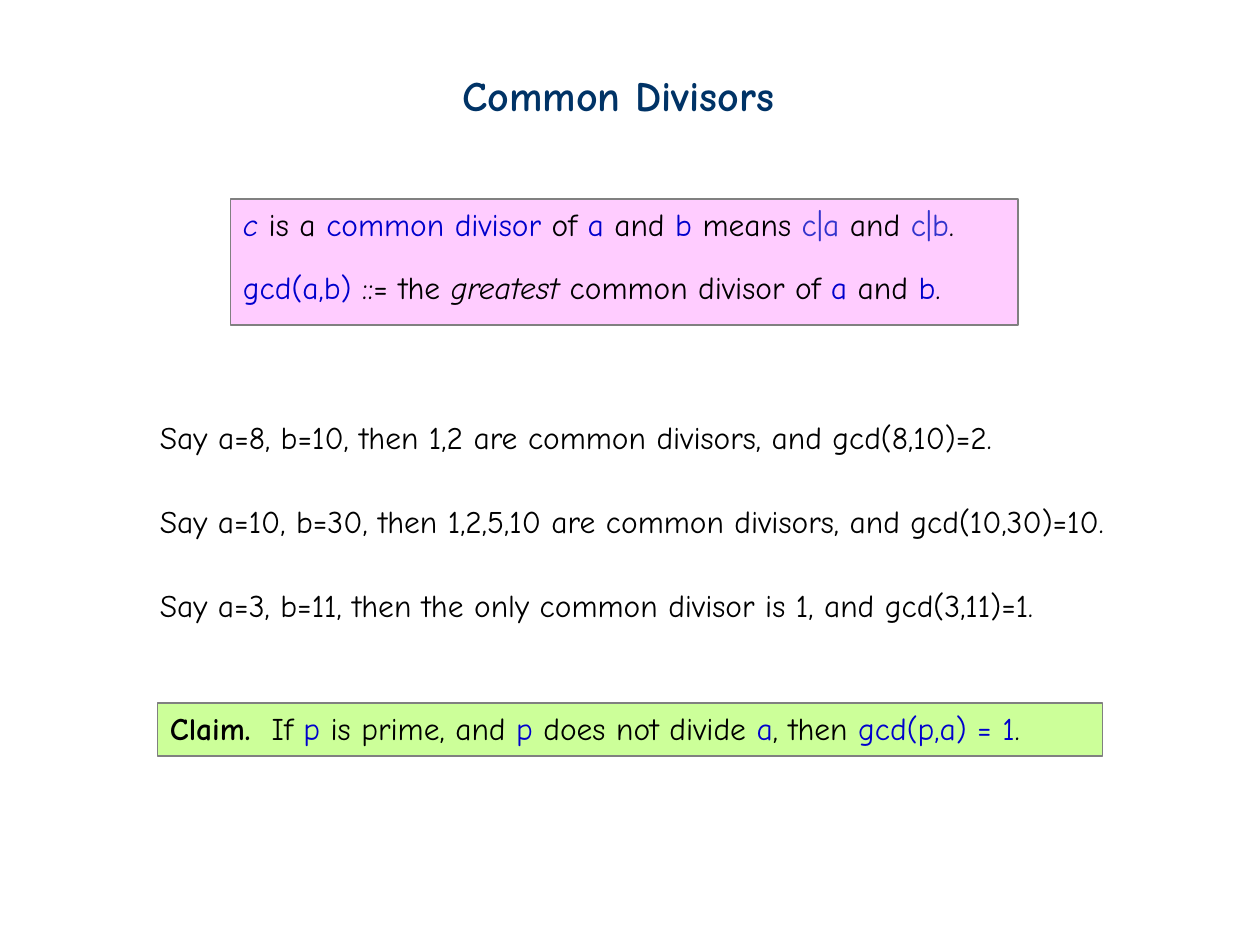
from dataclasses import dataclass

from lxml.etree import SubElement
from pptx import Presentation
from pptx.dml.color import RGBColor as RGB
from pptx.enum.shapes import MSO_SHAPE as SHAPE
from pptx.enum.text import MSO_ANCHOR as ANCHOR, MSO_AUTO_SIZE as AUTO, PP_ALIGN as ALIGN
from pptx.oxml.ns import qn
from pptx.util import Inches, Pt


@dataclass(frozen=True)
class Theme:
    font: str = "Comic Neue"
    title_size: int = 24
    body_size: int = 18
    title: str = "003366"
    text: str = "000000"
    term: str = "0000CC"
    divides: str = "3333CC"
    border: str = "808080"
    definition: str = "FFCCFF"
    claim: str = "CCFF99"


T = Theme()

# Content: a run is (text, colour, emphasis), the last two optional
TITLE = ("Common Divisors", T.title, "b")
DEFINITIONS = [
    [("c", T.term, "i"), (" is a ",), ("common divisor", T.term), (" of ",),
     ("a", T.term), (" and ",), ("b", T.term), (" means ",),
     ("c|a ", T.divides), ("and ",), ("c|b", T.divides), (".",)],
    [("gcd(a,b) ", T.term), ("::= the ",), ("greatest", T.text, "i"),
     (" common divisor of ",), ("a", T.term), (" and ",), ("b", T.term), (".",)],
]
EXAMPLES = [  # text, box width
    ("Say a=8, b=10, then 1,2 are common divisors, and gcd(8,10)=2.", 7.35),
    ("Say a=10, b=30, then 1,2,5,10 are common divisors, and gcd(10,30)=10.", 8.33),
    ("Say a=3, b=11, then the only common divisor is 1, and gcd(3,11)=1.", 7.7),
]
CLAIM = [("Claim.", T.text, "b"), ("  If ",), ("p", T.term), (" is prime, and",),
         (" p ", T.term), ("does not divide",), (" a", T.term), (", then ",),
         ("gcd(p,a) = 1", T.term), (".",)]

# Layout in inches
WIDTH, HEIGHT = 10, 7.5
EXAMPLE_LEFT, EXAMPLE_TOP, EXAMPLE_STEP = 1.17, 3.27, 0.665
HANG = Inches(0.38)


def add_runs(p, runs, size):
    for text, color, emphasis in ((*run, T.text, "")[:3] if len(run) == 1
                                  else (*run, "")[:3] for run in runs):
        r = p.add_run()
        r.text = text
        r.font.name, r.font.size = T.font, Pt(size)
        r.font.color.rgb = RGB.from_string(color)
        r.font.bold, r.font.italic = emphasis == "b", emphasis == "i"


def add_line(s, left, top, width, height, run, size):
    """One unwrapped line of text."""
    box = s.shapes.add_textbox(*map(Inches, (left, top, width, height)))
    tf = box.text_frame
    tf.word_wrap, tf.auto_size = False, AUTO.SHAPE_TO_FIT_TEXT
    add_runs(tf.paragraphs[0], [run], size)


def add_panel(s, left, top, width, height, fill, paragraphs):
    """Bordered box; lines after the first are set wider apart."""
    sp = s.shapes.add_shape(SHAPE.RECTANGLE, *map(Inches, (left, top, width, height)))
    sp.shadow.inherit = False
    sp.fill.solid()
    sp.fill.fore_color.rgb = RGB.from_string(fill)
    sp.line.color.rgb = RGB.from_string(T.border)
    sp.line.width = Pt(0.75)
    tf = sp.text_frame
    tf.word_wrap, tf.vertical_anchor = True, ANCHOR.TOP
    for i, runs in enumerate(paragraphs):
        p = tf.add_paragraph() if i else tf.paragraphs[0]
        p.alignment = ALIGN.LEFT
        if i:
            p.line_spacing = 1.5
        # Hanging indent and space before of 20%
        props = p._p.get_or_add_pPr()
        props.set("marL", str(HANG))
        props.set("indent", str(-HANG))
        before = SubElement(props, qn("a:spcBef"))
        SubElement(before, qn("a:spcPct")).set("val", "20000")
        add_runs(p, runs, T.body_size)


def main():
    prs = Presentation()
    prs.slide_width, prs.slide_height = Inches(WIDTH), Inches(HEIGHT)
    s = prs.slides.add_slide(prs.slide_layouts[6])

    # Title and definitions
    add_line(s, 3.57, 0.5, 2.84, 0.5, TITLE, T.title_size)
    add_panel(s, 1.83, 1.58, WIDTH * 5 / 8, 1, T.definition, DEFINITIONS)

    # Examples, evenly spaced
    for i, (text, width) in enumerate(EXAMPLES):
        add_line(s, EXAMPLE_LEFT, EXAMPLE_TOP + i * EXAMPLE_STEP, width, 0.4,
                 (text,), T.body_size)

    # Claim, centred across the slide
    add_panel(s, WIDTH / 8, 5.58, WIDTH * 3 / 4, 0.42, T.claim, [CLAIM])

    prs.save("out.pptx")


if __name__ == "__main__":
    main()
